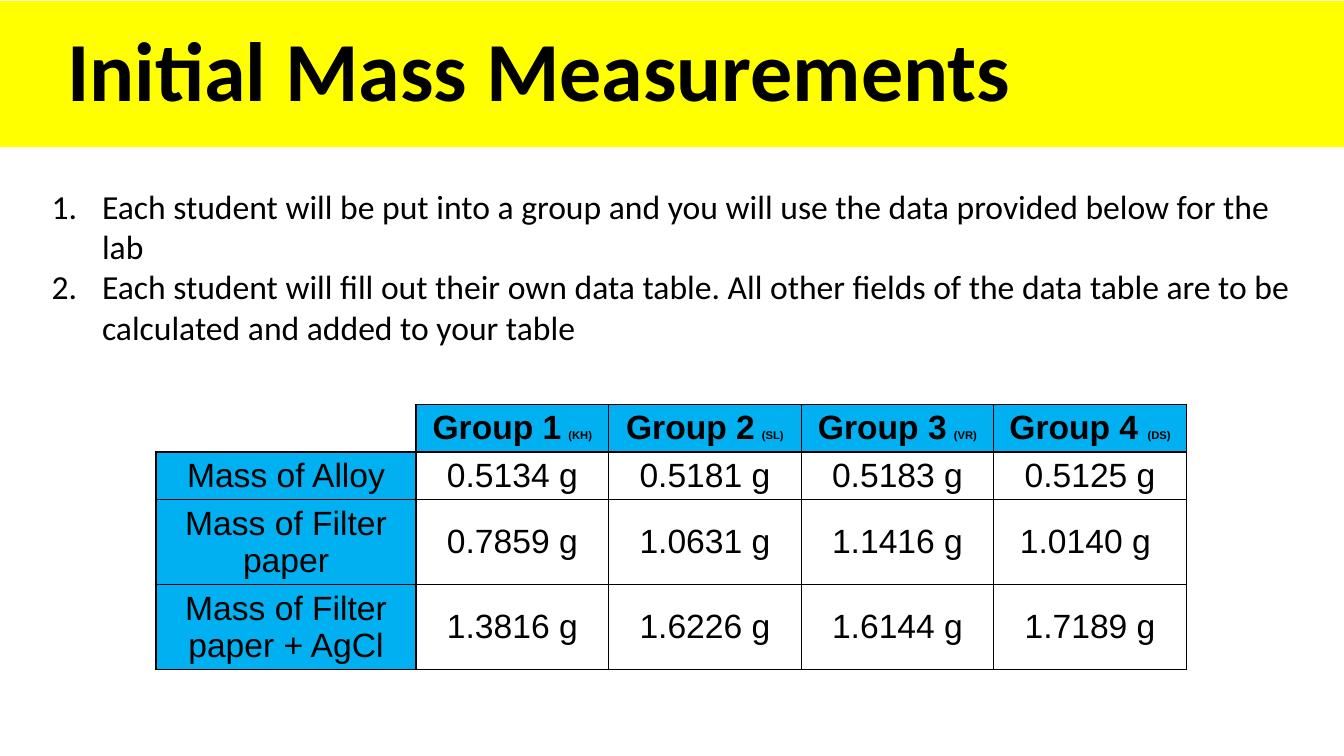
from pptx import Presentation
from pptx import util as u
from pptx.dml.color import RGBColor
from pptx.enum import shapes, text
from pptx.oxml import parse_xml
from pptx.oxml.ns import nsdecls

YELLOW = RGBColor(0xFF, 0xFF, 0x00)
BLUE = RGBColor(0x00, 0xB0, 0xF0)
WHITE = RGBColor(0xFF, 0xFF, 0xFF)
BLACK = RGBColor(0x00, 0x00, 0x00)

STEPS = [
    "Each student will be put into a group and you will use the data provided below for the lab",
    "Each student will fill out their own data table. All other fields of the data table are "
    "to be calculated and added to your table",
]
GROUPS = [
    [("Group 1", 24), (" ", 18), ("(KH)", 8)],
    [("Group 2", 24), (" ", 18), ("(SL)", 8)],
    [("Group 3", 24), (" ", 18), ("(VR)", 8)],
    [("Group 4 ", 24), ("(DS)", 8)],
]
MASSES = [
    ("Mass of Alloy", "0.5134 g", "0.5181 g", "0.5183 g", "0.5125 g"),
    ("Mass of Filter paper", "0.7859 g", "1.0631 g", "1.1416 g", "1.0140 g "),
    ("Mass of Filter paper + AgCl", "1.3816 g", "1.6226 g", "1.6144 g", "1.7189 g"),
]
COLUMN_SHARES = [19.36] + [14.33] * 4
ROW_SHARES = [6.3, 6.3, 11.2, 11.2]


class LabSlide:
    """Draw the lab slide's elements, with lengths in percent of the slide's size."""

    heading_font = "Calibri"
    table_font = "Arial"
    body_size = 24

    def __init__(self, deck):
        self.width, self.height = deck.slide_width, deck.slide_height
        self.page = deck.slides.add_slide(deck.slide_layouts[6])

    def across(self, share):
        return u.Emu(round(self.width * share / 100))

    def down(self, share):
        return u.Emu(round(self.height * share / 100))

    def place(self, left, top, width, height):
        return self.across(left), self.down(top), self.across(width), self.down(height)

    def style(self, font, name, size, bold=False):
        font.name, font.size, font.bold = name, u.Pt(size), bold
        font.color.rgb = BLACK

    def banner(self, title, *area):
        box = self.page.shapes.add_shape(shapes.MSO_SHAPE.RECTANGLE, *self.place(*area))
        box.shadow.inherit = False
        box.fill.solid()
        box.fill.fore_color.rgb = YELLOW
        box.line.fill.background()
        frame = box.text_frame
        frame.margin_left = self.across(5)
        frame.vertical_anchor = text.MSO_ANCHOR.MIDDLE
        para = frame.paragraphs[0]
        para.text = title
        para.alignment = text.PP_ALIGN.LEFT
        para.line_spacing = 0.9
        self.style(para.font, self.heading_font, 60, True)

    def numbered_list(self, items, *area):
        frame = self.page.shapes.add_textbox(*self.place(*area)).text_frame
        frame.word_wrap = True
        for index, item in enumerate(items):
            para = frame.add_paragraph() if index else frame.paragraphs[0]
            para.text = item
            properties = para._p.get_or_add_pPr()
            properties.set("marL", str(u.Inches(0.5)))
            properties.set("indent", str(-u.Inches(0.5)))
            properties.append(parse_xml(
                f'<a:buFont {nsdecls("a")} typeface="+mj-lt"/>'))
            properties.append(parse_xml(
                f'<a:buAutoNum {nsdecls("a")} type="arabicPeriod"/>'))
            self.style(para.font, self.heading_font, self.body_size)

    def border(self, cell, sides):
        properties = cell._tc.get_or_add_tcPr()
        for side in sides:
            properties.append(parse_xml(
                f'<a:ln{side} {nsdecls("a")} w="{u.Pt(1)}"><a:solidFill>'
                f'<a:srgbClr val="{BLACK}"/></a:solidFill></a:ln{side}>'))

    def fill_cell(self, cell, color, spans, bold=False):
        self.border(cell, "LRTB" if spans else "RB")
        cell.fill.solid()
        cell.fill.fore_color.rgb = color
        para = cell.text_frame.paragraphs[0]
        para.alignment = text.PP_ALIGN.CENTER
        self.style(para.font, self.table_font, self.body_size, bold)
        for words, size in spans:
            span = para.add_run()
            span.text = words
            self.style(span.font, self.table_font, size, bold)

    def mass_table(self, left, top):
        area = self.place(left, top, sum(COLUMN_SHARES), sum(ROW_SHARES))
        table = self.page.shapes.add_table(len(ROW_SHARES), len(COLUMN_SHARES), *area).table
        table.first_row = table.horz_banding = False
        for column, share in zip(table.columns, COLUMN_SHARES):
            column.width = self.across(share)
        for row, share in zip(table.rows, ROW_SHARES):
            row.height = self.down(share)
        self.fill_cell(table.cell(0, 0), WHITE, [])
        for column, spans in enumerate(GROUPS, 1):
            self.fill_cell(table.cell(0, column), BLUE, spans, True)
        for row, entries in enumerate(MASSES, 1):
            for column, words in enumerate(entries):
                cell = table.cell(row, column)
                self.fill_cell(cell, WHITE if column else BLUE, [(words, self.body_size)])
                if column:
                    cell.vertical_anchor = text.MSO_ANCHOR.MIDDLE


def main():
    deck = Presentation()
    deck.slide_width, deck.slide_height = u.Inches(13.33), u.Inches(7.5)
    slide = LabSlide(deck)
    slide.banner("Initial Mass Measurements", 0, 0.13, 100, 19.33)
    slide.mass_table(11.6, 53.5)
    slide.numbered_list(STEPS, 3.1, 23.9, 95.3, 22.9)
    deck.save("out.pptx")


if __name__ == "__main__":
    main()
